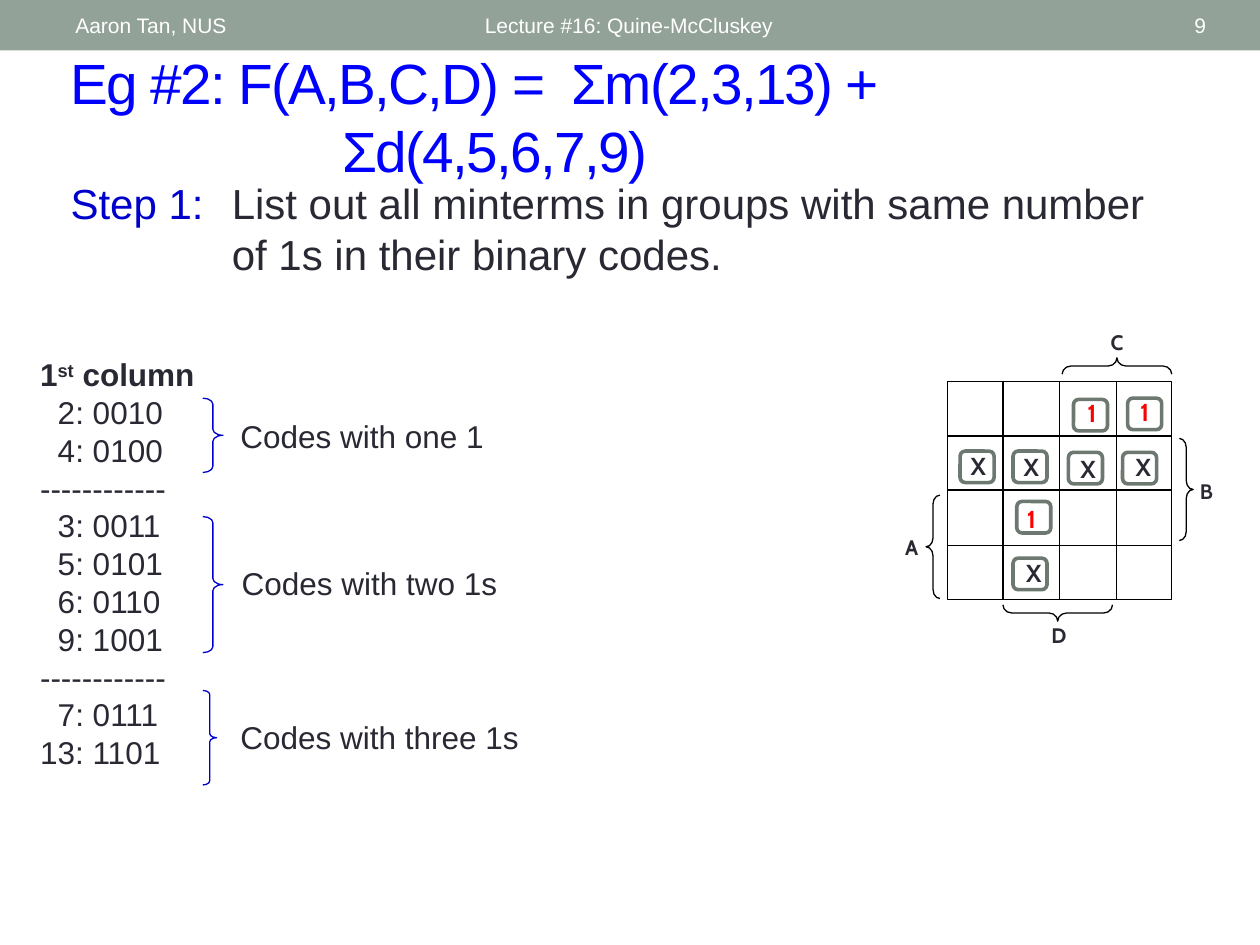
from dataclasses import dataclass

from lxml import etree
from pptx import Presentation
from pptx.dml.color import RGBColor
from pptx.enum.shapes import MSO_CONNECTOR, MSO_SHAPE
from pptx.enum.text import MSO_ANCHOR, MSO_AUTO_SIZE, PP_ALIGN
from pptx.oxml.ns import qn
from pptx.util import Inches, Pt

LEFT, CENTER, RIGHT = PP_ALIGN.LEFT, PP_ALIGN.CENTER, PP_ALIGN.RIGHT
TOP, MIDDLE = MSO_ANCHOR.TOP, MSO_ANCHOR.MIDDLE
LEFT_BRACE, RIGHT_BRACE = MSO_SHAPE.LEFT_BRACE, MSO_SHAPE.RIGHT_BRACE
RECTANGLE, ROUNDED = MSO_SHAPE.RECTANGLE, MSO_SHAPE.ROUNDED_RECTANGLE
STRAIGHT = MSO_CONNECTOR.STRAIGHT


@dataclass(frozen=True)
class Theme:
    font: str = "Arial"
    map_font: str = "Cabin"
    band: str = "93A299"
    white: str = "FFFFFF"
    title: str = "0000FF"
    accent: str = "0000CC"
    text: str = "292934"
    black: str = "000000"
    one: str = "FF0000"
    ring: str = "6D7871"
    title_size: float = 32.4
    body_size: float = 24
    list_size: float = 18
    mark_size: float = 14
    small_size: float = 12
    line_factor: float = 1.2
    thin: float = 0.75
    thick: float = 2.08


THEME = Theme()


def inches(box):
    return [Inches(round(value, 2)) for value in box]


def style_run(run, size, color, font=THEME.font, bold=False):
    run.font.size = Pt(size)
    run.font.name = font
    run.font.bold = bold
    run.font.color.rgb = RGBColor.from_string(color)


def set_indent(paragraph, left, first=0):
    properties = paragraph._p.get_or_add_pPr()
    properties.set("marL", str(Inches(left)))
    properties.set("indent", str(Inches(first)))
    return properties


def set_line_height(paragraph, size):
    paragraph.line_spacing = Pt(round(size * THEME.line_factor, 1))


def add_text(shapes, box, text, size, color=THEME.text, font=THEME.font,
             bold=False, align=LEFT, anchor=TOP):
    text_frame = shapes.add_textbox(*inches(box)).text_frame
    text_frame.word_wrap = True
    text_frame.vertical_anchor = anchor
    text_frame.text = text
    for paragraph in text_frame.paragraphs:
        paragraph.alignment = align
        for run in paragraph.runs:
            style_run(run, size, color, font, bold)
    return text_frame


def add_outline(shapes, kind, box, color, width, adjust=None, rotation=0, flip=None):
    shape = shapes.add_shape(kind, *inches(box))
    shape.shadow.inherit = False
    shape.fill.background()
    shape.line.color.rgb = RGBColor.from_string(color)
    shape.line.width = Pt(width)
    shape.rotation = rotation
    if adjust is not None:
        shape.adjustments[0] = adjust
    if flip:
        shape._element.spPr.find(qn("a:xfrm")).set(flip, "1")
    return shape


def add_line(shapes, *ends):
    connector = shapes.add_connector(STRAIGHT, *inches(ends))
    connector.line.color.rgb = RGBColor.from_string(THEME.black)
    connector.line.width = Pt(THEME.thin)
    etree.SubElement(connector._element.spPr, qn("a:effectLst"))


def place(placeholder, box):
    placeholder.left, placeholder.top, placeholder.width, placeholder.height = inches(box)
    placeholder.text_frame.auto_size = MSO_AUTO_SIZE.NONE
    placeholder.text_frame.word_wrap = True
    return placeholder.text_frame


def header(slide, left, top, width, height):
    band = add_outline(slide.shapes, RECTANGLE, (left, top, width, height), THEME.band, 0)
    band.fill.solid()
    band.fill.fore_color.rgb = RGBColor.from_string(THEME.band)
    band.line.fill.background()
    for offset, span, text, align in ((0.5, 3.17, "Aaron Tan, NUS", LEFT),
                                      (3.75, 4.5, "Lecture #16: Quine-McCluskey", LEFT),
                                      (8.72, 0.95, "9", RIGHT)):
        add_text(slide.shapes, (left + offset, top + 0.02, span, height - 0.04), text,
                 THEME.small_size, THEME.white, align=align, anchor=MIDDLE)


def title(slide, box):
    text_frame = place(slide.shapes.title, box)
    text_frame.vertical_anchor = MIDDLE
    text_frame.margin_right = Inches(0.4)
    text_frame.text = "Eg #2: F(A,B,C,D) =  Σm(2,3,13) + Σd(4,5,6,7,9)"
    paragraph = text_frame.paragraphs[0]
    paragraph.alignment = LEFT
    set_indent(paragraph, 2.16, -2.16)
    set_line_height(paragraph, THEME.title_size)
    run = paragraph.runs[0]
    style_run(run, THEME.title_size, THEME.title)
    run._r.get_or_add_rPr().set("spc", "-100")


def step(slide, box):
    paragraph = place(slide.placeholders[1], box).paragraphs[0]
    for text, color in (("Step 1:", THEME.accent),
                        ("\tList out all minterms in groups with same number "
                         "of 1s in their binary codes.", THEME.text)):
        run = paragraph.add_run()
        run.text = text
        style_run(run, THEME.body_size, color)
    paragraph.space_before = Pt(0)
    set_line_height(paragraph, THEME.body_size)
    # Hanging indent with a tab stop and no bullet
    properties = set_indent(paragraph, 1.28, -1.28)
    etree.SubElement(properties, qn("a:buNone"))
    tabs = etree.SubElement(properties, qn("a:tabLst"))
    etree.SubElement(tabs, qn("a:tab"), pos=str(Inches(1.28)), algn="l")


def minterm_column(slide, left, top, width, height):
    rule = "-" * 12
    rows = ["", "2: 0010", "4: 0100", rule, "3: 0011", "5: 0101", "6: 0110",
            "9: 1001", rule, "7: 0111", "13: 1101"]
    text_frame = add_text(slide.shapes, (left, top, width, height), "\n".join(rows),
                          THEME.list_size)
    heading = text_frame.paragraphs[0]
    for text in ("1", "st", " column"):
        run = heading.add_run()
        run.text = text
        style_run(run, THEME.list_size, THEME.text, bold=True)
    heading.runs[1]._r.get_or_add_rPr().set("baseline", "30000")
    for paragraph, row in zip(text_frame.paragraphs, rows):
        set_line_height(paragraph, THEME.list_size)
        if row[1:2] == ":":
            set_indent(paragraph, 0.14)

    # Braces with their captions
    for offset, brace_width, span, label_left, label_top, text in (
            (0.39, 0.16, 0.59, 1.59, 0.49, "Codes with one 1"),
            (1.33, 0.16, 1.08, 1.6, 1.66, "Codes with two 1s"),
            (2.71, 0.11, 0.75, 1.59, 2.88, "Codes with three 1s")):
        shapes = slide.shapes.add_group_shape().shapes
        add_outline(shapes, RIGHT_BRACE, (left + 1.39, top + offset, brace_width, span),
                    THEME.accent, THEME.thin, 0.3)
        add_text(shapes, (left + label_left, top + label_top, 2.5, 0.4), text,
                 THEME.list_size)


def karnaugh_map(slide, left, top, width, height):
    shapes = slide.shapes.add_group_shape().shapes
    right, bottom = left + width, top + height

    # Four by four grid
    add_outline(shapes, RECTANGLE, (left, top, width, height), THEME.black, THEME.thin)
    for index in range(1, 4):
        x, y = left + index * width / 4, top + index * height / 4
        add_line(shapes, x, top, x, bottom)
        add_line(shapes, left, y, right, y)

    # Variable braces and letters, as offsets from the grid
    for letter, letter_x, letter_y, brace, adjust, rotation, flip in (
            ("A", -0.45, 1.16, (-0.17, 0.9, 0.11, 0.82), 0.64, 0, None),
            ("B", 1.89, 0.72, (1.84, 0.45, 0.11, 0.81), 0.64, 0, "flipH"),
            ("C", 1.18, -0.46, (1.28, -0.56, 0.13, 0.87), 0.54, 90, "flipV"),
            ("D", 0.72, 1.86, (0.81, 1.4, 0.13, 0.87), 0.54, 270, None)):
        x, y, brace_width, brace_height = brace
        add_outline(shapes, LEFT_BRACE, (left + x, top + y, brace_width, brace_height),
                    THEME.black, THEME.thin, adjust, rotation, flip)
        add_text(shapes, (left + letter_x, top + letter_y, 0.33, 0.3), letter,
                 THEME.small_size, font=THEME.map_font, bold=True, align=CENTER)

    # Marks and the rings around them, as offsets from the grid
    for mark, mark_x, mark_y, ring_x, ring_y in (
            ("1", 0.92, 0.08, 1.0, 0.14), ("1", 1.34, 0.07, 1.43, 0.13),
            ("X", 0.02, 0.5, 0.1, 0.55), ("X", 0.44, 0.51, 0.52, 0.55),
            ("X", 0.89, 0.52, 0.96, 0.56), ("X", 1.33, 0.51, 1.39, 0.56),
            ("1", 0.44, 0.92, 0.55, 0.95), ("X", 0.46, 1.35, 0.52, 1.4)):
        add_outline(shapes, ROUNDED, (left + ring_x, top + ring_y, 0.27, 0.25),
                    THEME.ring, THEME.thick)
        add_text(shapes, (left + mark_x, top + mark_y, 0.45, 0.35), mark, THEME.mark_size,
                 THEME.one if mark == "1" else THEME.text, THEME.map_font, True, CENTER)


def main():
    presentation = Presentation()
    presentation.slide_width, presentation.slide_height = Inches(10), Inches(7.5)
    slide = presentation.slides.add_slide(presentation.slide_layouts[1])
    header(slide, 0, 0, 10, 0.4)
    title(slide, (0.46, 0.57, 9.21, 0.7))
    step(slide, (0.46, 1.36, 8.77, 0.92))
    minterm_column(slide, 0.22, 2.77, 1.5, 3.43)
    karnaugh_map(slide, 7.52, 3.03, 1.78, 1.73)
    presentation.save("out.pptx")


if __name__ == "__main__":
    main()
